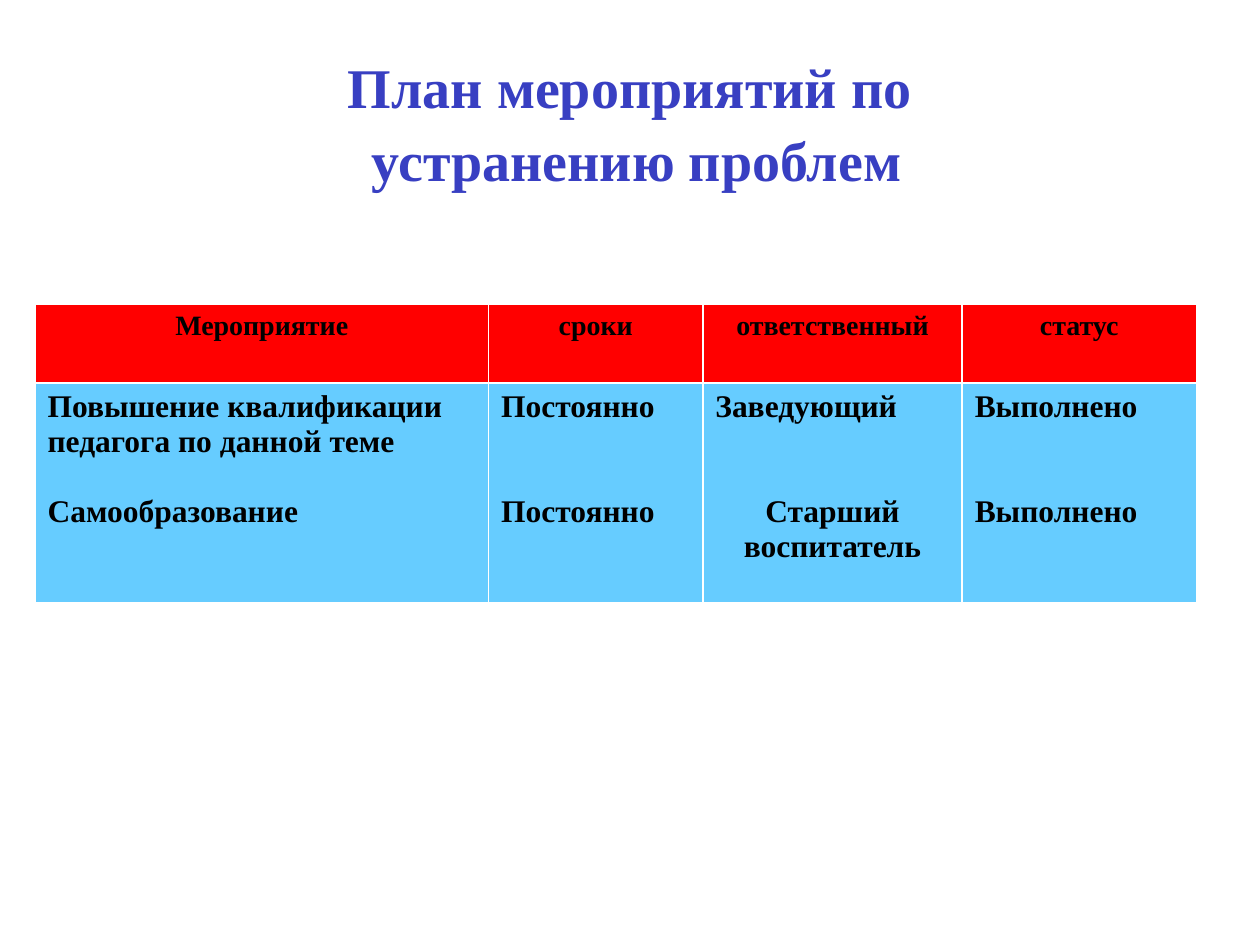
from dataclasses import dataclass

from pptx import Presentation
from pptx.dml.color import RGBColor
from pptx.enum import text
from pptx.util import Pt

LEFT, CENTER = text.PP_ALIGN.LEFT, text.PP_ALIGN.CENTER


@dataclass(frozen=True)
class Theme:
    font: str = "Times New Roman"
    title: str = "383FC2"
    ink: str = "000000"
    header_fill: str = "FF0000"
    body_fill: str = "66CCFF"
    title_size: int = 32
    header_size: int = 16
    body_size: int = 18


THEME = Theme()
TITLE = "План мероприятий по\v устранению проблем"
HEADERS = ["Мероприятие", "сроки", "ответственный", "статус"]
# Each cell: (text, alignment, space before) per paragraph
ACTIVITIES = [
    [("Повышение квалификации педагога по данной теме", LEFT, 0),
     ("Самообразование", LEFT, 20)],
    [("Постоянно", LEFT, 0), ("Постоянно", LEFT, 40)],
    [("Заведующий", LEFT, 0), ("Старший воспитатель", CENTER, 40)],
    [("Выполнено", LEFT, 0), ("Выполнено", LEFT, 40)],
]
COLUMN_WIDTHS = [259.2, 122.4, 148.2, 133.8]
ROW_HEIGHTS = [45, 125.5]


def write(p, content, size, color=THEME.ink, align=CENTER, before=0, spacing=None):
    p.text = content
    p.alignment = align
    if before:
        p.space_before = Pt(before)
    if spacing:
        p.line_spacing = spacing
    for r in p.runs:
        r.font.name = THEME.font
        r.font.size = Pt(size)
        r.font.bold = True
        r.font.color.rgb = RGBColor.from_string(color)


def fill_cell(cell, paragraphs, size, color):
    cell.fill.solid()
    cell.fill.fore_color.rgb = RGBColor.from_string(color)
    tf = cell.text_frame
    for i, (content, align, before) in enumerate(paragraphs):
        p = tf.add_paragraph() if i else tf.paragraphs[0]
        write(p, content, size, align=align, before=before)


def add_title(s):
    sp = s.shapes.title
    sp.left, sp.top, sp.width, sp.height = Pt(190), Pt(26), Pt(340), Pt(85)
    tf = sp.text_frame
    tf.word_wrap = False
    tf.auto_size = text.MSO_AUTO_SIZE.NONE
    tf.vertical_anchor = text.MSO_ANCHOR.MIDDLE
    write(tf.paragraphs[0], TITLE, THEME.title_size, THEME.title, spacing=1.08)


def add_plan(s):
    table = s.shapes.add_table(
        len(ROW_HEIGHTS), len(HEADERS), Pt(20), Pt(173.8),
        Pt(sum(COLUMN_WIDTHS)), Pt(sum(ROW_HEIGHTS))).table
    for column, width in zip(table.columns, COLUMN_WIDTHS):
        column.width = Pt(width)
    for row, height in zip(table.rows, ROW_HEIGHTS):
        row.height = Pt(height)
    for c, (header, paragraphs) in enumerate(zip(HEADERS, ACTIVITIES)):
        fill_cell(table.cell(0, c), [(header, CENTER, 0)],
                  THEME.header_size, THEME.header_fill)
        fill_cell(table.cell(1, c), paragraphs, THEME.body_size, THEME.body_fill)


def main():
    prs = Presentation()
    prs.slide_width, prs.slide_height = Pt(720), Pt(540)
    s = prs.slides.add_slide(prs.slide_layouts[5])
    add_title(s)
    add_plan(s)
    prs.save("out.pptx")


if __name__ == "__main__":
    main()
